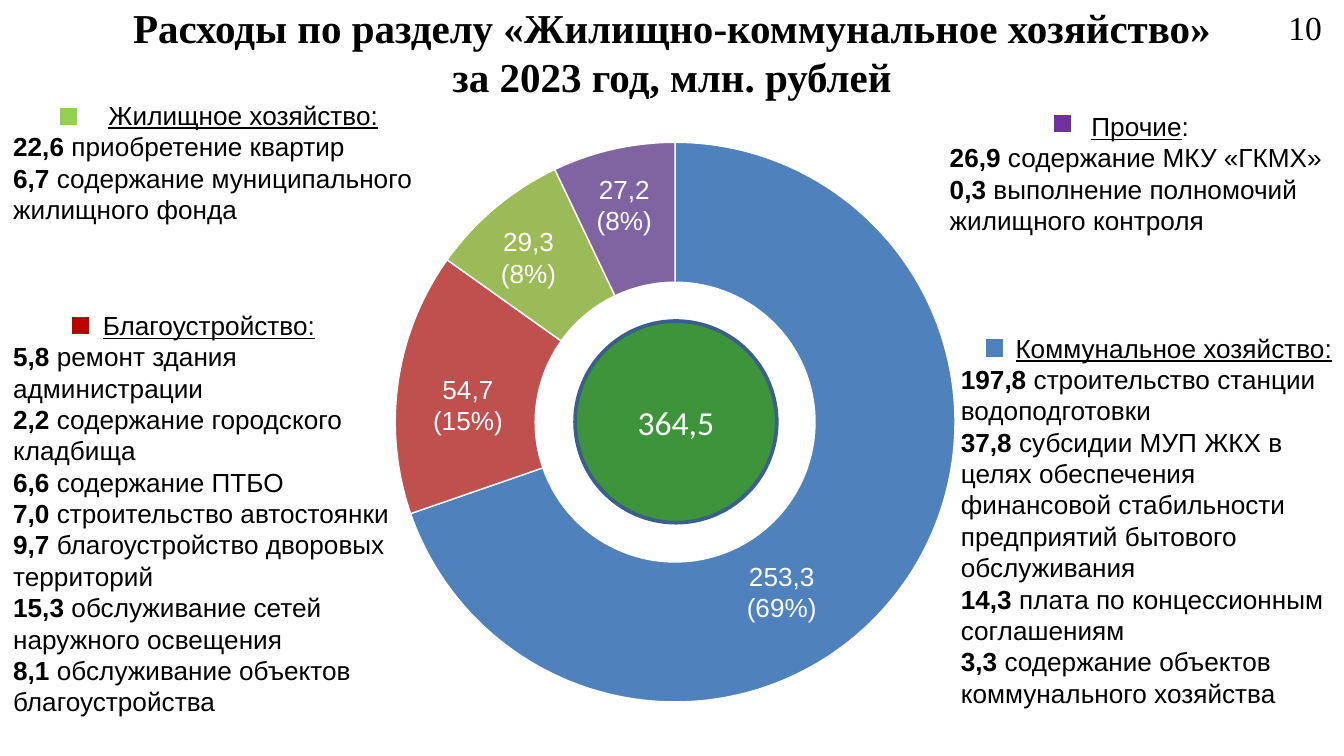
from dataclasses import dataclass

from pptx import Presentation
from pptx.chart.data import CategoryChartData
from pptx.dml.color import RGBColor
from pptx.enum.chart import XL_CHART_TYPE
from pptx.enum.shapes import MSO_SHAPE
from pptx.enum.text import MSO_ANCHOR, MSO_AUTO_SIZE, PP_ALIGN
from pptx.util import Cm, Pt

DOUGHNUT = XL_CHART_TYPE.DOUGHNUT
OVAL, RECTANGLE = MSO_SHAPE.OVAL, MSO_SHAPE.RECTANGLE
MIDDLE = MSO_ANCHOR.MIDDLE
NO_FIT, GROW = MSO_AUTO_SIZE.NONE, MSO_AUTO_SIZE.SHAPE_TO_FIT_TEXT
LEFT, CENTER = PP_ALIGN.LEFT, PP_ALIGN.CENTER
TITLE_ONLY = 5


@dataclass(frozen=True)
class Theme:
    """Colours, fonts and type sizes of the slide."""
    black: str = "000000"
    white: str = "FFFFFF"
    blue: str = "4F81BD"
    red: str = "C0504D"
    green: str = "9BBB59"
    purple: str = "8064A2"
    total_fill: str = "3E943A"
    total_line: str = "3A5F8C"
    housing_mark: str = "92D050"
    improvement_mark: str = "C00000"
    other_mark: str = "7030A0"
    serif: str = "Times New Roman"
    sans: str = "Arial"
    chart_font: str = "Calibri"
    title_size: int = 22
    number_size: int = 18
    body_size: int = 14


THEME = Theme()

TITLE = ("Расходы по разделу «Жилищно-коммунальное хозяйство»",
         "за 2023 год, млн. рублей")

SECTORS = [
    (69, THEME.blue, ("253,3", "(69%)"), (13.44, 10.46, 2.67, 1.45)),
    (15, THEME.red, ("54,7", "(15%)"), (7.7, 6.93, 2.29, 1.45)),
    (8, THEME.green, ("29,3", "(8%)"), (9.09, 4.14, 1.8, 1.45)),
    (7, THEME.purple, ("27,2", "(8%)"), (10.9, 3.15, 1.8, 1.45)),
]

SECTIONS = [
    {"box": (17.91, 6.15, 7.59, 7.44), "mark": (0.69, 0.23), "color": THEME.blue,
     "heading": "Коммунальное хозяйство:", "indent": 0.96,
     "items": [
         ("197,8", "строительство станции водоподготовки"),
         ("37,8", "субсидии МУП ЖКХ в целях обеспечения финансовой "
                  "стабильности предприятий бытового обслуживания"),
         ("14,3", "плата по концессионным соглашениям"),
         ("3,3", "содержание объектов коммунального хозяйства")]},
    {"box": (0, 1.75, 8.1, 2.64), "mark": (1.09, 0.25), "color": THEME.housing_mark,
     "heading": "Жилищное хозяйство:", "indent": 1.1,
     "items": [
         ("22,6", "приобретение квартир"),
         ("6,7", "содержание муниципального жилищного фонда")]},
    {"box": (0, 5.72, 7.9, 8.64), "mark": (1.32, 0.23), "color": THEME.improvement_mark,
     "heading": "Благоустройство:", "indent": 0,
     "items": [
         ("5,8", "ремонт здания администрации"),
         ("2,2", "содержание городского кладбища"),
         ("6,6", "содержание ПТБО"),
         ("7,0", "строительство автостоянки"),
         ("9,7", "благоустройство дворовых территорий"),
         ("15,3", "обслуживание сетей наружного освещения"),
         ("8,1", "обслуживание объектов благоустройства")]},
    {"box": (17.7, 1.96, 7.7, 3.25), "mark": (2.18, 0.18), "color": THEME.other_mark,
     "heading": "Прочие", "tail": ":", "indent": 0,
     "items": [
         ("26,9", "содержание МКУ «ГКМХ»"),
         ("0,3", "выполнение полномочий жилищного контроля")]},
]


def lengths(box):
    """Turn a box in centimetres into lengths."""
    return [Cm(value) for value in box]


def add_run(paragraph, text, color, **formats):
    """Add a run with the given colour and font formats."""
    run = paragraph.add_run()
    run.text = text
    run.font.color.rgb = RGBColor.from_string(color)
    for name, value in formats.items():
        setattr(run.font, name, value)


def add_text_box(shapes, box):
    """Add an empty wrapping text box and return its frame."""
    frame = shapes.add_textbox(*lengths(box)).text_frame
    frame.word_wrap = True
    frame.auto_size = GROW
    return frame


def add_paragraphs(frame, paragraphs, color):
    """Fill a frame with paragraphs of (alignment, indent, runs)."""
    for index, (alignment, indent, runs) in enumerate(paragraphs):
        paragraph = frame.add_paragraph() if index else frame.paragraphs[0]
        paragraph.alignment = alignment
        if indent:
            paragraph._p.get_or_add_pPr().set("marL", str(Cm(indent)))
        for text, formats in runs:
            add_run(paragraph, text, color, name=THEME.sans,
                    size=Pt(THEME.body_size), **formats)


def add_filled_shape(shapes, kind, box, fill, line):
    """Add a flat shape with a fill and a two-point outline."""
    shape = shapes.add_shape(kind, *lengths(box))
    shape.shadow.inherit = False
    shape.fill.solid()
    shape.fill.fore_color.rgb = RGBColor.from_string(fill)
    shape.line.color.rgb = RGBColor.from_string(line)
    shape.line.width = Pt(2)
    return shape


def add_title(slide, box):
    """Place and format the title placeholder."""
    title = slide.shapes.title
    title.left, title.top, title.width, title.height = lengths(box)
    frame = title.text_frame
    for name, value in {"vertical_anchor": MIDDLE, "word_wrap": True,
                        "auto_size": NO_FIT}.items():
        setattr(frame, name, value)
    paragraph = frame.paragraphs[0]
    paragraph.alignment = CENTER
    for index, line in enumerate(TITLE):
        if index:
            paragraph.add_line_break()
        add_run(paragraph, line, THEME.black, name=THEME.serif,
                size=Pt(THEME.title_size), bold=True)


def add_page_number(slide, box):
    """Add the page number in the corner."""
    frame = add_text_box(slide.shapes, box)
    add_run(frame.paragraphs[0], "10", THEME.black, name=THEME.serif,
            size=Pt(THEME.number_size))


def add_ring(slide, box):
    """Add the doughnut chart of the sectors."""
    data = CategoryChartData()
    data.categories = [str(number) for number in range(1, len(SECTORS) + 1)]
    data.add_series("Series 1", [sector[0] for sector in SECTORS])
    chart = slide.shapes.add_chart(DOUGHNUT, *lengths(box), data).chart
    chart.has_title = chart.has_legend = False
    chart.font.name = THEME.chart_font
    chart.font.size = Pt(THEME.number_size)
    chart.font.color.rgb = RGBColor.from_string(THEME.black)
    plot = chart.plots[0]
    plot.vary_by_categories = True
    plot.has_data_labels = False
    for index, (_, color, _, _) in enumerate(SECTORS):
        form = plot.series[0].points[index].format
        form.fill.solid()
        form.fill.fore_color.rgb = RGBColor.from_string(color)
        form.line.color.rgb = RGBColor.from_string(THEME.white)
        form.line.width = Pt(0.75)


def add_total(slide, box):
    """Add the circle with the total in the middle of the ring."""
    circle = add_filled_shape(slide.shapes, OVAL, box, THEME.total_fill, THEME.total_line)
    circle.text_frame.vertical_anchor = MIDDLE
    paragraph = circle.text_frame.paragraphs[0]
    paragraph.alignment = CENTER
    add_run(paragraph, "364,5", THEME.white, name=THEME.chart_font,
            size=Pt(THEME.number_size))


def add_sector_label(slide, lines, box):
    """Add the amount and share of one sector."""
    add_paragraphs(add_text_box(slide.shapes, box),
                   [(CENTER, 0, [(line, {})]) for line in lines], THEME.white)


def add_section(slide, section):
    """Add a marked heading with its list of expenses as a group."""
    shapes = slide.shapes.add_group_shape().shapes
    left, top = section["box"][:2]
    heading = [(section["heading"], {"underline": True}), (section.get("tail", ""), {})]
    paragraphs = [(CENTER, section["indent"], [run for run in heading if run[0]])]
    paragraphs += [(LEFT, 0, [(amount, {"bold": True}), (" " + purpose, {})])
                   for amount, purpose in section["items"]]
    add_paragraphs(add_text_box(shapes, section["box"]), paragraphs, THEME.black)
    across, down = section["mark"]
    add_filled_shape(shapes, RECTANGLE, (left + across, top + down, 0.4, 0.4),
                     section["color"], THEME.white)


def main():
    """Build and save the slide."""
    presentation = Presentation()
    presentation.slide_width, presentation.slide_height = Cm(25.4), Cm(14.29)
    slide = presentation.slides.add_slide(presentation.slide_layouts[TITLE_ONLY])
    add_ring(slide, (4.29, 2.34, 16.94, 11.28))
    add_title(slide, (0, 0, 25.4, 1.96))
    add_page_number(slide, (24.1, 0, 1.3, 1.02))
    add_total(slide, (10.87, 6.07, 3.81, 3.81))
    for _, _, lines, box in SECTORS:
        add_sector_label(slide, lines, box)
    for section in SECTIONS:
        add_section(slide, section)
    presentation.save("out.pptx")


if __name__ == "__main__":
    main()
